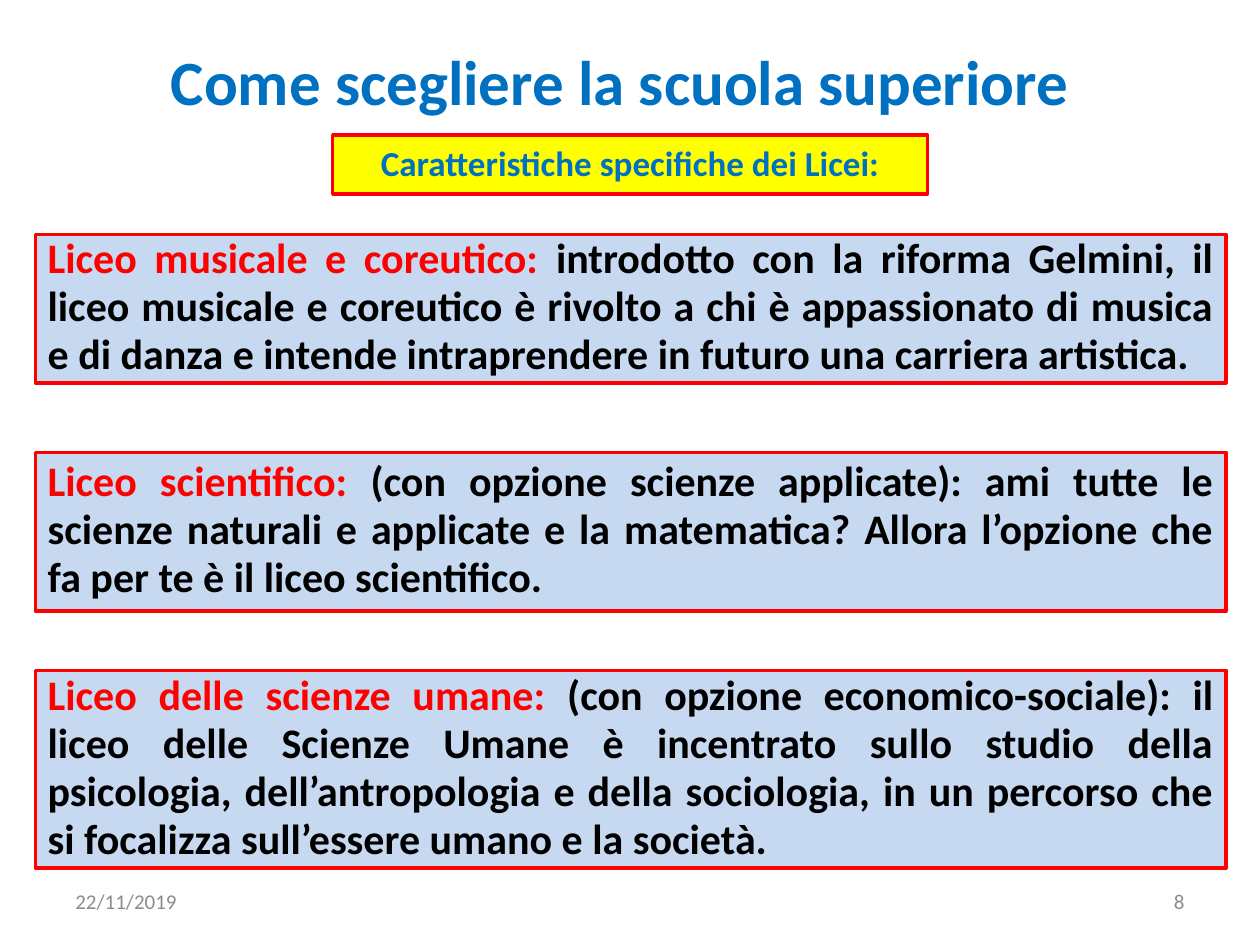
from dataclasses import dataclass

import pptx
import pptx.dml.color
import pptx.enum.shapes
import pptx.enum.text
import pptx.util

ALIGN = pptx.enum.text.PP_ALIGN
ANCHOR = pptx.enum.text.MSO_ANCHOR
WIDTH, HEIGHT = 10, 7.5
BLUE, RED, BLACK, GREY = "0070C0", "FF0000", "000000", "8C8C8C"
YELLOW, PALE_BLUE = "FFFF00", "C6D9F1"


@dataclass
class Run:
    text: str
    size: int
    color: str
    bold: bool = True


@dataclass
class Area:
    """Left, top, width and height as shares of the slide's size."""
    left: float
    top: float
    width: float
    height: float

    def lengths(self) -> list[int]:
        return [pptx.util.Inches(self.left * WIDTH), pptx.util.Inches(self.top * HEIGHT),
                pptx.util.Inches(self.width * WIDTH), pptx.util.Inches(self.height * HEIGHT)]


@dataclass
class Liceo:
    name: str
    description: str
    top: float
    height: float


def rgb(color: str) -> pptx.dml.color.RGBColor:
    return pptx.dml.color.RGBColor.from_string(color)


def write(shape, runs: list[Run], align: ALIGN, top_inset: float = 0.05,
          bottom_inset: float = 0.05, line_spacing: float = 1.0) -> None:
    frame = shape.text_frame
    frame.word_wrap = True
    frame.vertical_anchor = ANCHOR.MIDDLE
    frame.margin_top = pptx.util.Inches(top_inset)
    frame.margin_bottom = pptx.util.Inches(bottom_inset)
    paragraph = frame.paragraphs[0]
    paragraph.alignment = align
    paragraph.line_spacing = line_spacing
    for item in runs:
        run = paragraph.add_run()
        run.text = item.text
        run.font.name = "Calibri"
        run.font.size = pptx.util.Pt(item.size)
        run.font.bold = item.bold
        run.font.color.rgb = rgb(item.color)


def add_label(slide, area: Area, run: Run, align: ALIGN) -> None:
    write(slide.shapes.add_textbox(*area.lengths()), [run], align)


def add_panel(slide, area: Area, fill: str):
    panel = slide.shapes.add_shape(pptx.enum.shapes.MSO_SHAPE.RECTANGLE, *area.lengths())
    panel.shadow.inherit = False
    panel.fill.solid()
    panel.fill.fore_color.rgb = rgb(fill)
    panel.line.color.rgb = rgb(RED)
    panel.line.width = pptx.util.Pt(2)
    return panel


LICEI = [
    Liceo("Liceo musicale e coreutico: ",
          "introdotto con la riforma Gelmini, il liceo musicale e coreutico è rivolto a chi "
          "è appassionato di musica e di danza e intende intraprendere in futuro una "
          "carriera artistica.", 1.86, 1.18),
    Liceo("Liceo scientifico: ",
          "(con opzione scienze applicate): ami tutte le scienze naturali e applicate e la "
          "matematica? Allora l’opzione che fa per te è il liceo scientifico.", 3.59, 1.26),
    Liceo("Liceo delle scienze umane: ",
          "(con opzione economico-sociale): il liceo delle Scienze Umane è incentrato sullo "
          "studio della psicologia, dell’antropologia e della sociologia, in un percorso che "
          "si focalizza sull’essere umano e la società.", 5.32, 1.57),
]


def main() -> None:
    presentation = pptx.Presentation()
    presentation.slide_width = pptx.util.Inches(WIDTH)
    presentation.slide_height = pptx.util.Inches(HEIGHT)
    slide = presentation.slides.add_slide(presentation.slide_layouts[6])

    # Title and subtitle
    add_label(slide, Area(0.067, 0.4 / HEIGHT, 0.85, 0.47 / HEIGHT),
              Run("Come scegliere la scuola superiore", 36, BLUE), ALIGN.CENTER)
    subtitle = add_panel(slide, Area(0.264, 1.07 / HEIGHT, 0.472, 0.47 / HEIGHT), YELLOW)
    write(subtitle, [Run("Caratteristiche specifiche dei Licei:", 20, BLUE)], ALIGN.CENTER,
          bottom_inset=0.08)

    # One panel for each liceo, its lines tightened to stay inside the border
    for liceo in LICEI:
        area = Area(0.028, liceo.top / HEIGHT, 0.945, liceo.height / HEIGHT)
        write(add_panel(slide, area, PALE_BLUE),
              [Run(liceo.name, 24, RED), Run(liceo.description, 24, BLACK)],
              ALIGN.JUSTIFY, top_inset=0, bottom_inset=0.02, line_spacing=0.95)

    # Footer: date and slide number
    for left, text, align in [(0.05, "22/11/2019", ALIGN.LEFT), (0.717, "8", ALIGN.RIGHT)]:
        add_label(slide, Area(left, 6.95 / HEIGHT, 0.233, 0.4 / HEIGHT),
                  Run(text, 12, GREY, bold=False), align)

    presentation.save("out.pptx")


if __name__ == "__main__":
    main()
